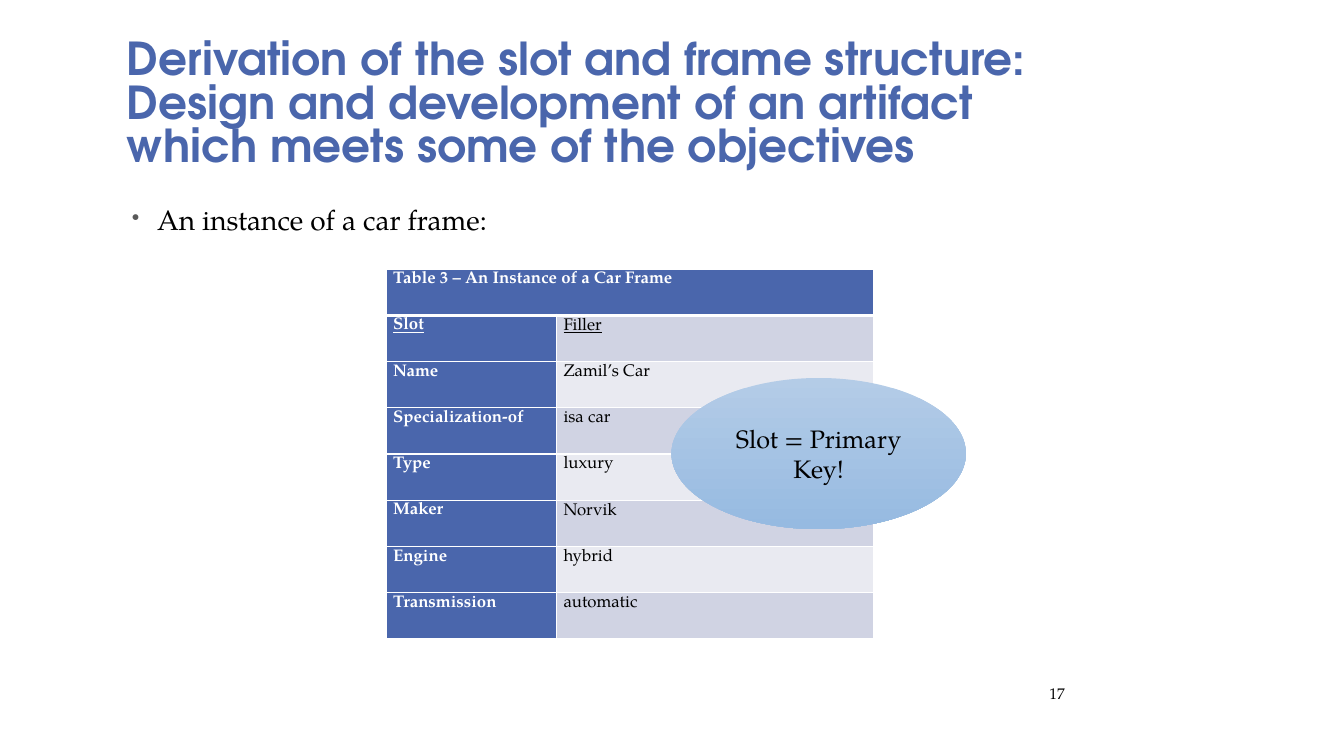
from pptx import Presentation
from pptx.dml.color import RGBColor
from pptx.enum.shapes import MSO_SHAPE
from pptx.enum.text import MSO_ANCHOR, PP_ALIGN
from pptx.oxml import parse_xml
from pptx.oxml.ns import nsdecls
from pptx.util import Inches, Pt

HEADING_FONT = "TeX Gyre Adventor"
BODY_FONT = "TeX Gyre Pagella"
BLUE, WHITE, BLACK = "4A66AC", "FFFFFF", "000000"
BANDS = ["D0D3E3", "E9EAF1"]

TABLE_TITLE = "Table 3 – An Instance of a Car Frame"
SLOTS = [
    ("Slot", "Filler"),
    ("Name", "Zamil’s Car"),
    ("Specialization-of", "isa car"),
    ("Type", "luxury"),
    ("Maker", "Norvik"),
    ("Engine", "hybrid"),
    ("Transmission", "automatic"),
]


def rgb(value):
    return RGBColor.from_string(value)


def write(frame, text, size, color=BLACK, font=BODY_FONT, bold=False,
          underline=False, align=PP_ALIGN.LEFT, spacing=1.0):
    para = frame.paragraphs[0]
    para.text = text
    para.alignment = align
    para.line_spacing = spacing
    for span in para.runs:
        span.font.name = font
        span.font.size = Pt(size)
        span.font.bold = bold
        span.font.underline = underline
        span.font.color.rgb = rgb(color)
    return para


def add_text(page, place, text, size, anchor=MSO_ANCHOR.TOP, **style):
    box = page.shapes.add_textbox(*map(Inches, place))
    frame = box.text_frame
    frame.word_wrap = True
    frame.vertical_anchor = anchor
    return write(frame, text, size, **style)


def add_bullet(para):
    properties = para._p.get_or_add_pPr()
    properties.set("marL", str(Inches(0.3)))
    properties.set("indent", str(Inches(-0.25)))
    for element in ('<a:buClr {}><a:srgbClr val="595959"/></a:buClr>',
                    '<a:buSzPct {} val="80000"/>',
                    '<a:buChar {} char="•"/>'):
        properties.append(parse_xml(element.format(nsdecls("a"))))


def add_borders(cell, top=1, bottom=1):
    properties = cell._tc.get_or_add_tcPr()
    for side, width in (("L", 1), ("R", 1), ("T", top), ("B", bottom)):
        properties.append(parse_xml(
            f'<a:ln{side} {nsdecls("a")} w="{Pt(width)}"><a:solidFill>'
            f'<a:srgbClr val="{WHITE}"/></a:solidFill></a:ln{side}>'))


def fill_cell(cell, text, fill, color, bold, underline=False, top=1, bottom=1):
    cell.margin_left = cell.margin_right = Inches(0.07)
    cell.margin_top = cell.margin_bottom = 0
    add_borders(cell, top, bottom)
    cell.fill.solid()
    cell.fill.fore_color.rgb = rgb(fill)
    write(cell.text_frame, text, 12, color=color, bold=bold,
          underline=underline, spacing=1.15)


def add_frame_table(page):
    row_count = len(SLOTS) + 1
    table = page.shapes.add_table(row_count, 2, Inches(3.83), Inches(2.67),
                                  Inches(4.83), Inches(3.67)).table
    for column, width in zip(table.columns, (1.69, 3.14)):
        column.width = Inches(width)
    for row in table.rows:
        row.height = Inches(3.67 / row_count)
    table.cell(0, 0).merge(table.cell(0, 1))
    fill_cell(table.cell(0, 0), TABLE_TITLE, BLUE, WHITE, True, bottom=3)
    add_borders(table.cell(0, 1), bottom=3)
    for index, (slot, filler) in enumerate(SLOTS):
        heading = index == 0
        top = 3 if heading else 1
        fill_cell(table.cell(index + 1, 0), slot, BLUE, WHITE, True,
                  heading, top)
        fill_cell(table.cell(index + 1, 1), filler, BANDS[index % 2], BLACK,
                  False, heading, top)


def add_callout(page, place, text):
    ellipse = page.shapes.add_shape(MSO_SHAPE.OVAL, *map(Inches, place))
    ellipse.shadow.inherit = False
    ellipse.line.fill.background()
    ellipse.fill.gradient()
    ellipse.fill.gradient_angle = 270
    for stop, color in zip(ellipse.fill.gradient_stops, ("B4CCE7", "96BAE1")):
        stop.color.rgb = rgb(color)
    ellipse.text_frame.word_wrap = True
    ellipse.text_frame.vertical_anchor = MSO_ANCHOR.MIDDLE
    write(ellipse.text_frame, text, 18, align=PP_ALIGN.CENTER)


def main():
    deck = Presentation()
    deck.slide_width = Inches(13.33)
    deck.slide_height = Inches(7.5)
    page = deck.slides.add_slide(deck.slide_layouts[6])
    add_text(page, (1.16, 0.58, 9.5, 1.17),
             "Derivation of the slot and frame structure:\n"
             "Design and development of an artifact which meets some of "
             "the objectives",
             32.4, anchor=MSO_ANCHOR.BOTTOM, color=BLUE, font=HEADING_FONT,
             bold=True, spacing=0.8)
    add_bullet(add_text(page, (1.16, 2, 9.5, 4.58),
                        "An instance of a car frame:", 20, spacing=0.9))
    add_text(page, (9.33, 6.73, 1.33, 0.3), "17", 11,
             anchor=MSO_ANCHOR.MIDDLE, align=PP_ALIGN.RIGHT)
    add_frame_table(page)
    add_callout(page, (6.66, 3.75, 2.92, 1.5), "Slot = Primary Key!")
    deck.save("out.pptx")


if __name__ == "__main__":
    main()
